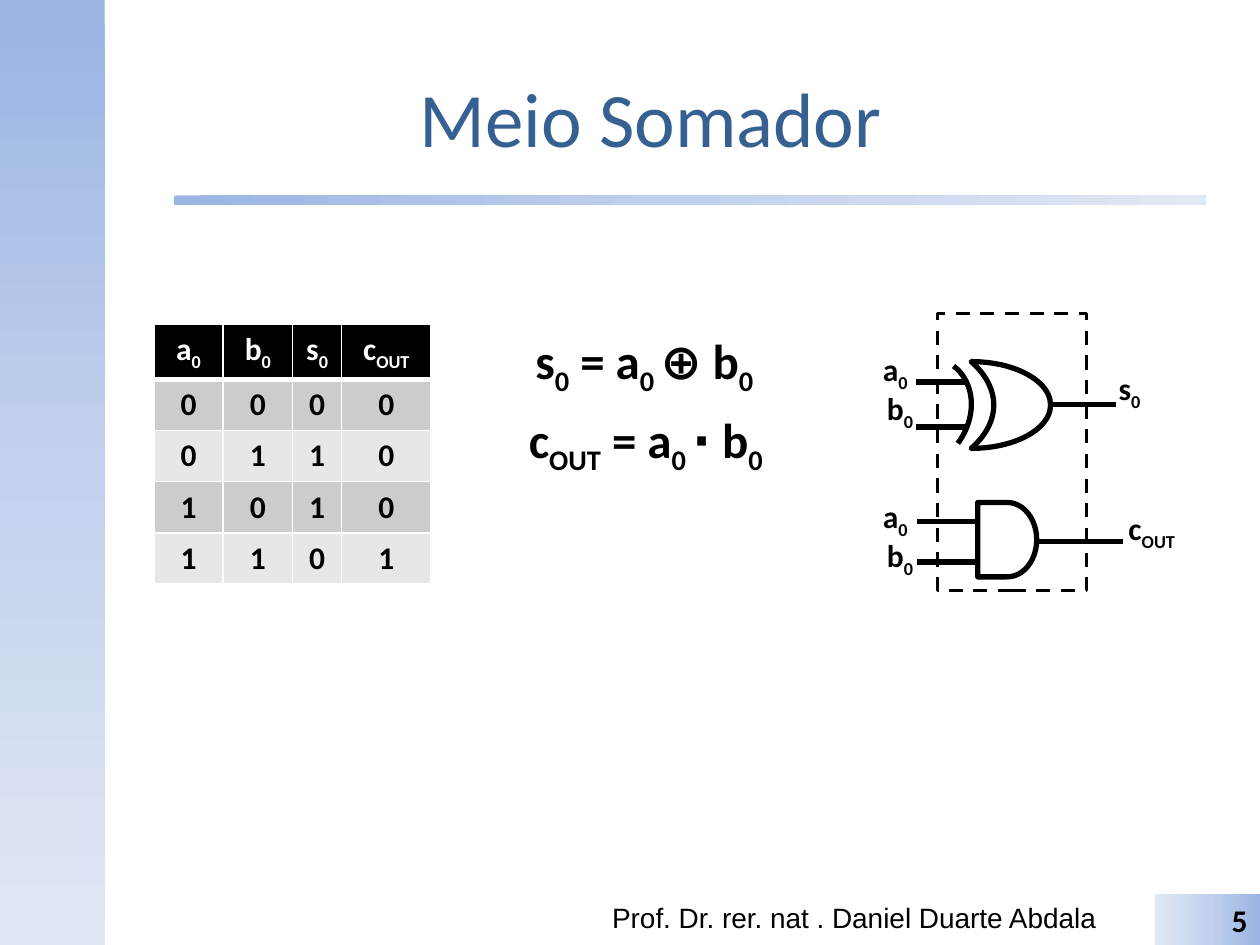
from dataclasses import dataclass
from lxml.etree import SubElement
from pptx import Presentation
from pptx.dml.color import RGBColor
from pptx.enum.dml import MSO_LINE
from pptx.enum.shapes import MSO_CONNECTOR, MSO_SHAPE
from pptx.enum.text import MSO_ANCHOR, PP_ALIGN
from pptx.oxml.ns import qn
from pptx.util import Cm, Pt

HUES = {
    "black": "000000",
    "white": "FFFFFF",
    "title": "376092",
    "dark": "9AB5E4",
    "mid": "C2D1ED",
    "pale": "E1E8F5",
    "odd": "CCCCCC",
    "even": "E7E7E7",
}
FADE = ((0, "dark"), (50, "mid"), (100, "pale"))
LEFT, CENTER, RIGHT = PP_ALIGN.LEFT, PP_ALIGN.CENTER, PP_ALIGN.RIGHT


@dataclass
class Box:
    left: float
    top: float
    width: float
    height: float

    def lengths(self) -> tuple:
        return Cm(self.left), Cm(self.top), Cm(self.width), Cm(self.height)


@dataclass
class Label:
    text: str
    box: Box
    size: int = 18
    align: PP_ALIGN = LEFT
    bold: bool = True
    hue: str = "black"
    face: str = "Calibri"
    wrap: bool = False
    anchor: MSO_ANCHOR = MSO_ANCHOR.TOP


@dataclass
class Wire:
    start: float
    end: float
    level: float


def color(name: str) -> RGBColor:
    return RGBColor.from_string(HUES[name])


def write(frame, label: Label) -> None:
    para = frame.paragraphs[0]
    para.alignment = label.align
    font = para.font
    font.size, font.bold, font.name = Pt(label.size), label.bold, label.face
    font.color.rgb = color(label.hue)
    for index, part in enumerate(label.text.split("_")):
        if part:
            run = para.add_run()
            run.text = part
            if index % 2:
                run._r.get_or_add_rPr().set("baseline", "-25000")


def add_label(slide, label: Label) -> None:
    frame = slide.shapes.add_textbox(*label.box.lengths()).text_frame
    frame.word_wrap = label.wrap
    frame.vertical_anchor = label.anchor
    write(frame, label)


def add_panel(slide, kind: MSO_SHAPE, box: Box, angle: int):
    panel = slide.shapes.add_shape(kind, *box.lengths())
    panel.shadow.inherit = False
    panel.line.fill.background()
    panel.fill.gradient()
    grad = panel._element.spPr.find(qn("a:gradFill"))
    stops = grad.find(qn("a:gsLst"))
    for stop in list(stops):
        stops.remove(stop)
    for place, hue in FADE:
        stop = SubElement(stops, qn("a:gs"), pos=str(place * 1000))
        SubElement(stop, qn("a:srgbClr"), val=HUES[hue])
    grad.find(qn("a:lin")).set("ang", str(angle * 60000))
    return panel


def add_outline(slide, kind: MSO_SHAPE, box: Box, width: int = 3):
    shape = slide.shapes.add_shape(kind, *box.lengths())
    shape.shadow.inherit = False
    shape.fill.background()
    shape.line.color.rgb = color("black")
    shape.line.width = Pt(width)
    return shape


def add_wire(slide, wire: Wire) -> None:
    level = Cm(wire.level)
    line = slide.shapes.add_connector(
        MSO_CONNECTOR.STRAIGHT, Cm(wire.start), level, Cm(wire.end), level
    )
    line.line.color.rgb = color("black")
    line.line.width = Pt(3)
    SubElement(line._element.spPr, qn("a:effectLst"))


def add_edges(cell, row: int) -> None:
    props = cell._tc.get_or_add_tcPr()
    widths = {"L": 1, "R": 1, "T": 3 if row == 1 else 1, "B": 3 if row == 0 else 1}
    for side, width in widths.items():
        edge = SubElement(props, qn(f"a:ln{side}"), w=str(Pt(width)))
        fill = SubElement(edge, qn("a:solidFill"))
        SubElement(fill, qn("a:srgbClr"), val=HUES["white"])


def add_truth(slide, box: Box, widths: tuple, rows: list) -> None:
    table = slide.shapes.add_table(len(rows), len(widths), *box.lengths()).table
    for column, width in zip(table.columns, widths):
        column.width = Cm(width)
    for r, values in enumerate(rows):
        head = r == 0
        shade = "black" if head else "odd" if r % 2 else "even"
        for c, text in enumerate(values):
            cell = table.cell(r, c)
            add_edges(cell, r)
            cell.fill.solid()
            cell.fill.fore_color.rgb = color(shade)
            hue = "white" if head else "black"
            write(cell.text_frame, Label(text, box, align=CENTER, hue=hue))


def add_gates(slide) -> None:
    add_outline(slide, MSO_SHAPE.FLOWCHART_DELAY, Box(19.71, 10.13, 1.19, 1.5))
    arc = add_outline(slide, MSO_SHAPE.ARC, Box(17.5, 7.14, 2.01, 2.39))
    arc.rotation = 36.9
    moon = add_outline(slide, MSO_SHAPE.MOON, Box(19.58, 7.29, 1.6, 1.75))
    moon.adjustments[0] = 0.715
    moon._element.spPr.find(qn("a:xfrm")).set("flipH", "1")
    wires = (
        Wire(18.49, 19.71, 10.52),
        Wire(18.49, 19.74, 11.33),
        Wire(20.9, 22.63, 10.92),
        Wire(18.47, 19.46, 7.7),
        Wire(18.47, 19.48, 8.61),
        Wire(21.18, 22.5, 8.15),
        Wire(20.9, 22.5, 10.92),
    )
    for wire in wires:
        add_wire(slide, wire)
    for top in (6.93, 9.9):
        add_label(slide, Label("a_0", Box(17.55, top, 1.14, 1.02)))
        add_label(slide, Label("b_0", Box(17.6, top + 0.79, 1.09, 1.02), align=CENTER))
    add_label(slide, Label("s_0", Box(22.3, 7.32, 1.14, 1.02)))
    add_label(slide, Label("c_OUT", Box(22.5, 10.13, 1.57, 1.02)))
    frame = add_outline(slide, MSO_SHAPE.RECTANGLE, Box(18.9, 6.32, 3, 5.59), 2)
    frame.line.dash_style = MSO_LINE.DASH


def main() -> None:
    deck = Presentation()
    deck.slide_width, deck.slide_height = Cm(25.4), Cm(19.05)
    slide = deck.slides.add_slide(deck.slide_layouts[6])

    add_panel(slide, MSO_SHAPE.RECTANGLE, Box(0, 0, 2.11, 19.05), 90)
    add_panel(slide, MSO_SHAPE.ROUNDED_RECTANGLE, Box(3.51, 3.94, 20.8, 0.2), 0)
    add_label(slide, Label("Meio Somador", Box(2.11, 0.76, 22.02, 3.18), 44, CENTER,
                           False, "title", wrap=True, anchor=MSO_ANCHOR.MIDDLE))
    add_label(slide, Label("Prof. Dr. rer. nat . Daniel Duarte Abdala",
                           Box(12.09, 18.03, 10.64, 1.02), 16, bold=False,
                           face="Arial", wrap=True))

    inputs = [(a, b) for a in (0, 1) for b in (0, 1)]
    rows = [[str(v) for v in (a, b, a ^ b, a & b)] for a, b in inputs]
    add_truth(slide, Box(3.1, 6.53, 5.59, 5.15), (1.4, 1.4, 0.99, 1.8),
              [["a_0", "b_0", "s_0", "c_OUT"], *rows])

    spot = Box(23.29, 18.03, 2.11, 1.02)
    page = add_panel(slide, MSO_SHAPE.RECTANGLE, spot, 180)
    write(page.text_frame, Label("5", spot, align=RIGHT))

    add_label(slide, Label("s_0_ = a_0 _⊕ b_0", Box(10.36, 6.53, 5.26, 1.45), 28, CENTER))
    add_label(slide, Label("c_OUT_ = a_0 _⋅ b_0", Box(10.41, 8.13, 5.89, 1.45), 28, wrap=True))
    add_gates(slide)
    deck.save("out.pptx")


if __name__ == "__main__":
    main()
